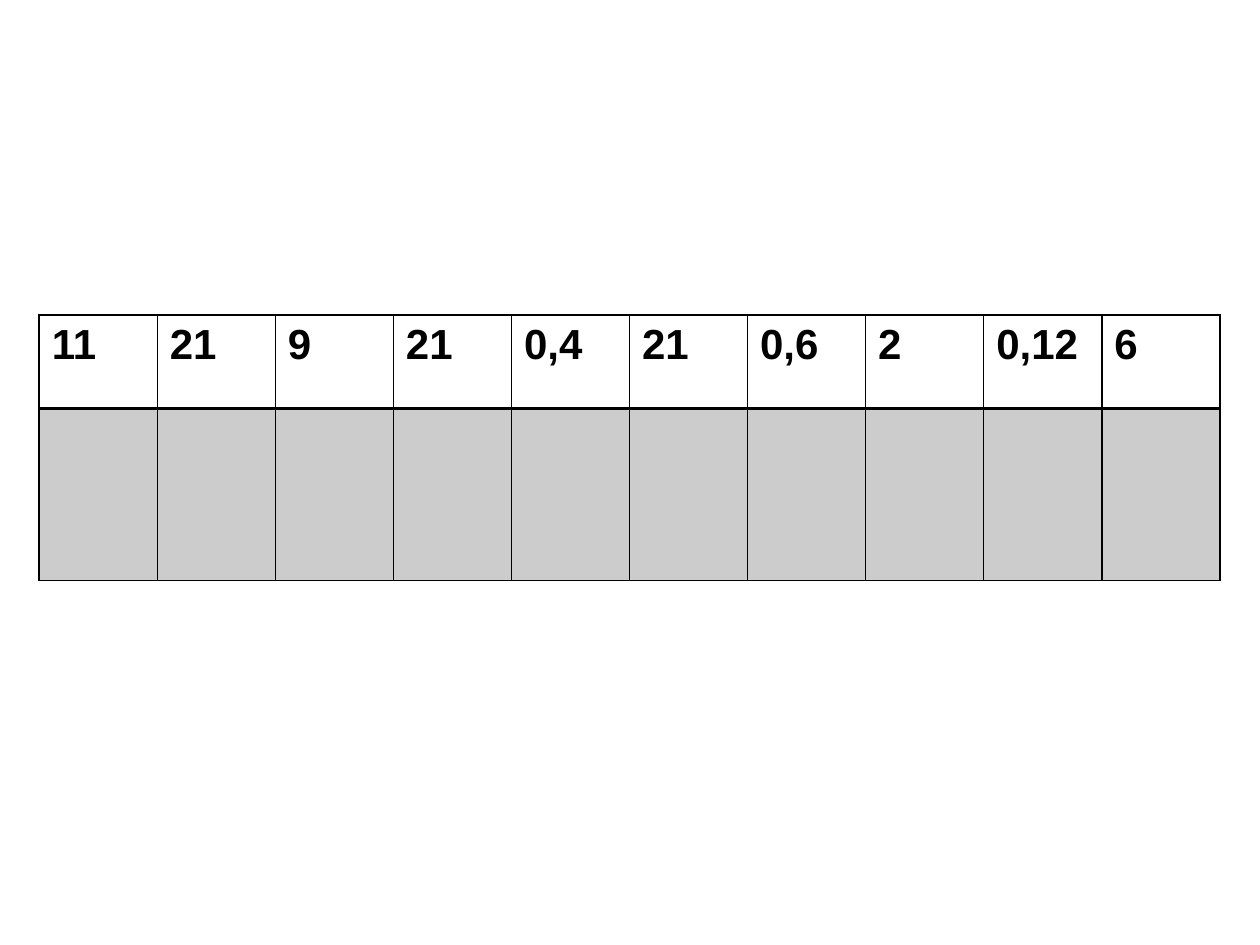
from lxml import etree
from pptx import Presentation
from pptx.dml.color import RGBColor
from pptx.oxml import ns
from pptx.util import Cm, Pt


def paint(fill, tone):
    fill.solid()
    fill.fore_color.rgb = RGBColor.from_string(tone)


def edge(cell, side, width, tone):
    props = cell._tc.get_or_add_tcPr()
    line = etree.SubElement(props, ns.qn("a:ln" + side), w=str(Pt(width)))
    fill = etree.SubElement(line, ns.qn("a:solidFill"))
    etree.SubElement(fill, ns.qn("a:srgbClr"), val=tone)


deck = Presentation()
deck.slide_width = Cm(25.4)
deck.slide_height = Cm(19.05)
slide = deck.slides.add_slide(deck.slide_layouts[6])

terms = ["11", "21", "9", "21", "0,4", "21", "0,6", "2", "0,12", "6"]
frame = slide.shapes.add_table(2, len(terms), Cm(0.79), Cm(6.35), Cm(23.82), Cm(5.35))
table = frame.table
table.first_row = False
table.horz_banding = False
table.rows[0].height = Cm(1.89)
table.rows[1].height = Cm(3.46)

for col, term in enumerate(terms):
    table.columns[col].width = Cm(2.38)
    head, answer = table.cell(0, col), table.cell(1, col)
    for cell, top, bottom in ((head, 1, 2), (answer, 2, 1)):
        for side, width in zip("LRTB", (1, 1, top, bottom)):
            edge(cell, side, width, "000000")

    head.fill.background()
    head.text_frame.text = term
    font = head.text_frame.paragraphs[0].runs[0].font
    font.name = "Arial"
    font.size = Pt(24)
    font.bold = True
    paint(font.fill, "000000")

    paint(answer.fill, "000000")
    shade = answer._tc.tcPr.find(ns.qn("a:solidFill"))[0]
    etree.SubElement(shade, ns.qn("a:alpha"), val="20000")

deck.save("out.pptx")
